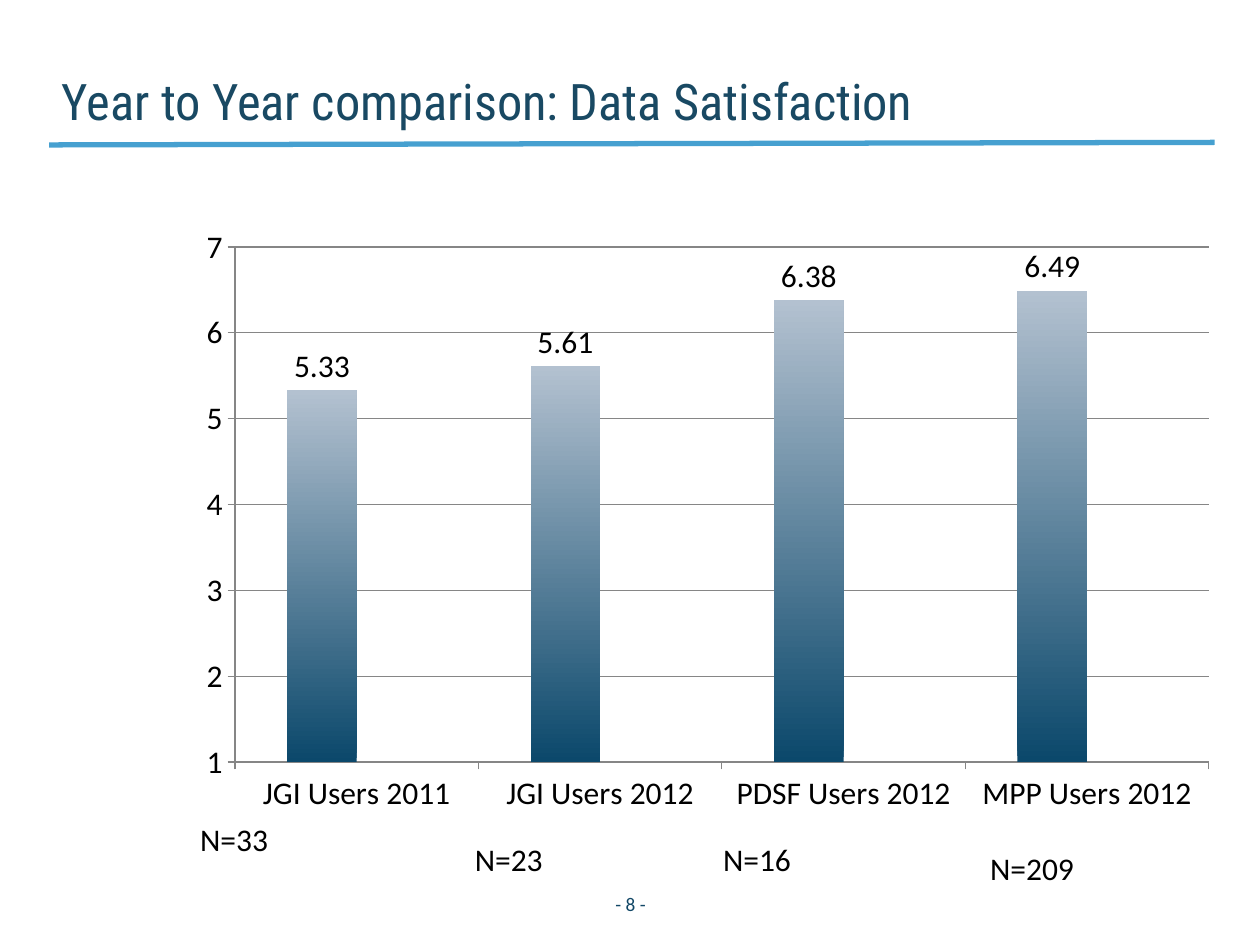
import pptx
import pptx.chart.data
import pptx.dml.color
import pptx.enum.chart
import pptx.enum.shapes
import pptx.enum.text
import pptx.oxml
import pptx.oxml.ns
import pptx.util

inch = pptx.util.Inches
ALIGN = pptx.enum.text.PP_ALIGN
ANCHOR = pptx.enum.text.MSO_ANCHOR
INK, NAVY = "000000", "194963"


def rgb(code):
    return pptx.dml.color.RGBColor.from_string(code)


def write(frame, text, size=18, font="Calibri", color=INK, align=ALIGN.LEFT,
          anchor=ANCHOR.TOP, wrap=False):
    frame.word_wrap = wrap
    frame.vertical_anchor = anchor
    paragraph = frame.paragraphs[0]
    paragraph.alignment = align
    run = paragraph.add_run()
    run.text = text
    run.font.size = pptx.util.Pt(size)
    run.font.name = font
    run.font.color.rgb = rgb(color)
    return paragraph


deck = pptx.Presentation()
deck.slide_width, deck.slide_height = inch(10), inch(7.5)
slide = deck.slides.add_slide(deck.slide_layouts[5])

# Heading and its rule
heading = slide.shapes.title
heading.left, heading.top = inch(0.39), inch(0.2)
heading.width, heading.height = inch(7.46), inch(0.84)
frame = heading.text_frame
frame.auto_size = pptx.enum.text.MSO_AUTO_SIZE.NONE
frame.margin_left = frame.margin_right = inch(0.1)
frame.margin_top = frame.margin_bottom = 0
line = write(frame, "Year to Year comparison: Data Satisfaction", size=28.8,
             font="Roboto Condensed", color=NAVY, anchor=ANCHOR.BOTTOM, wrap=True)
indents = line._p.get_or_add_pPr()
indents.set("marL", str(inch(0.25)))
indents.set("indent", str(inch(-0.25)))

rule = slide.shapes.add_connector(pptx.enum.shapes.MSO_CONNECTOR.STRAIGHT,
                                  inch(0.39), inch(1.15), inch(9.64), inch(1.13))
rule.line.color.rgb = rgb("46A0D0")
rule.line.width = pptx.util.Pt(3)
rule._element.spPr.append(pptx.oxml.parse_xml(
    f"<a:effectLst {pptx.oxml.ns.nsdecls('a')}/>"))

# Satisfaction scores; the empty second series keeps its space beside each bar
scores = pptx.chart.data.CategoryChartData()
scores.categories = ["JGI Users 2011", "JGI Users 2012",
                     "PDSF Users 2012", "MPP Users 2012"]
scores.add_series("Series 1", [5.33, 5.61, 6.38, 6.49])
scores.add_series("Series 2", [None] * 4)
chart = slide.shapes.add_chart(
    pptx.enum.chart.XL_CHART_TYPE.COLUMN_CLUSTERED,
    inch(1.45), inch(1.72), inch(8.31), inch(4.81), scores).chart
chart.has_legend = False
chart.has_title = False
chart.font.size = pptx.util.Pt(18)
chart.font.name = "Calibri"
chart.font.color.rgb = rgb(INK)

plot = chart.plots[0]
plot.gap_width, plot.overlap = 150, 0
plot.vary_by_categories = False
satisfaction, blank = plot.series
fill = satisfaction.format.fill
fill.gradient()
fill.gradient_angle = 90
for stop, shade in zip(fill.gradient_stops, ("0B486B", "B3C1D0")):
    stop.color.rgb = rgb(shade)
blank.format.fill.solid()
blank.format.fill.fore_color.rgb = rgb("FCD235")
labels = satisfaction.data_labels
labels.show_value = True
labels.position = pptx.enum.chart.XL_LABEL_POSITION.OUTSIDE_END

scale = chart.value_axis
scale.minimum_scale, scale.maximum_scale, scale.major_unit = 1, 7, 1
scale.has_major_gridlines = True
scale.tick_labels.number_format = "General"
scale.tick_labels.number_format_is_linked = False
for axis in (scale, chart.category_axis):
    axis.major_tick_mark = pptx.enum.chart.XL_TICK_MARK.OUTSIDE
for part in (scale, chart.category_axis, scale.major_gridlines):
    part.format.line.color.rgb = rgb("868686")
    part.format.line.width = pptx.util.Pt(0.75)

plot_area = chart._chartSpace.chart.plotArea
for layout in plot_area.findall(pptx.oxml.ns.qn("c:layout")):
    plot_area.remove(layout)
shares = "".join(f'<c:{key} val="{share}"/>' for key, share in
                 (("x", 0.05), ("y", 0.05), ("w", 0.93), ("h", 0.85)))
plot_area.insert(0, pptx.oxml.parse_xml(
    f'<c:layout {pptx.oxml.ns.nsdecls("c")}><c:manualLayout>'
    '<c:layoutTarget val="inner"/><c:xMode val="edge"/><c:yMode val="edge"/>'
    f'{shares}</c:manualLayout></c:layout>'))

# Page number and sample sizes
page = slide.shapes.add_textbox(inch(4.5), inch(6.97), inch(1.01), inch(0.4))
write(page.text_frame, "- 8 -", size=11, color="114766", align=ALIGN.CENTER,
      anchor=ANCHOR.MIDDLE, wrap=True)

for sample, left, top, width in (("N=33", 1.49, 6.46, 0.75), ("N=23", 3.67, 6.62, 0.75),
                                 ("N=16", 5.64, 6.62, 0.75), ("N=209", 7.76, 6.69, 0.87)):
    note = slide.shapes.add_textbox(inch(left), inch(top), inch(width), inch(0.4))
    write(note.text_frame, sample)
    note.text_frame.auto_size = pptx.enum.text.MSO_AUTO_SIZE.SHAPE_TO_FIT_TEXT

deck.save("out.pptx")
